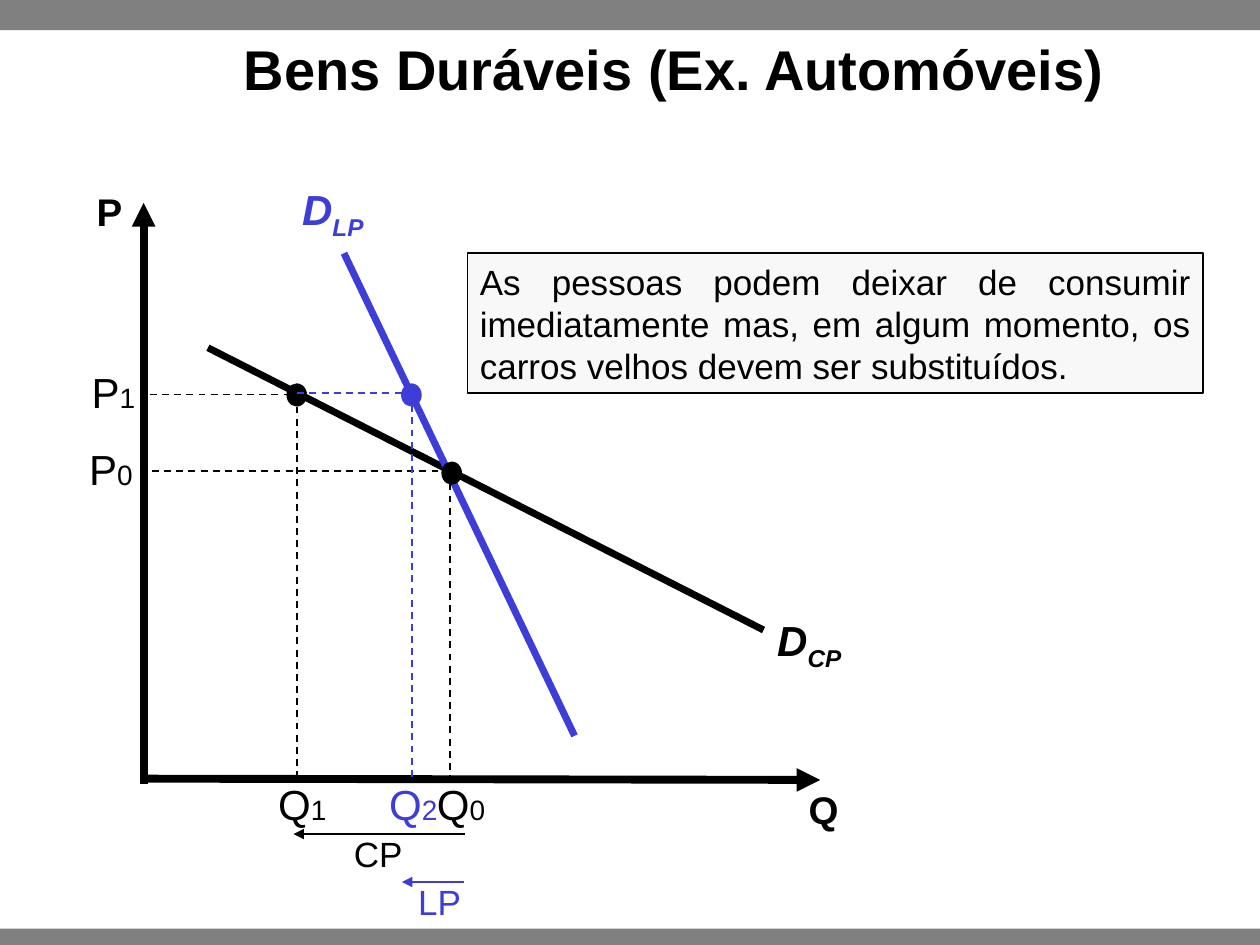
from lxml.etree import SubElement
from pptx import Presentation
from pptx.dml.color import RGBColor
from pptx.enum.dml import MSO_LINE
from pptx.enum.shapes import MSO_CONNECTOR, MSO_SHAPE
from pptx.enum.text import MSO_ANCHOR, PP_ALIGN
from pptx.oxml.ns import qn
from pptx.util import Inches, Pt

BLACK = RGBColor(0x00, 0x00, 0x00)
BLUE = RGBColor(0x3D, 0x3D, 0xD7)
GRAY = RGBColor(0x80, 0x80, 0x80)
PALE = RGBColor(0xF8, 0xF8, 0xF8)

# Shared chart coordinates in inches
PRICE_0, PRICE_1 = 3.74, 3.13
QUANTITY_0, QUANTITY_1, QUANTITY_2 = 3.57, 2.36, 3.27
AXIS_Y = 6.18


class DemandSlide:
    font = "Arial"

    def __init__(self, presentation):
        self.slide = presentation.slides.add_slide(presentation.slide_layouts[5])
        self.shapes = self.slide.shapes

    def style(self, run, size, color=BLACK, bold=False, italic=False):
        font = run.font
        font.name, font.size = self.font, Pt(size)
        font.bold, font.italic = bold, italic
        font.color.rgb = color

    def title(self, text, left, top, width, height):
        title = self.shapes.title
        title.left, title.top = Inches(left), Inches(top)
        title.width, title.height = Inches(width), Inches(height)
        frame = title.text_frame
        frame.text = text
        frame.word_wrap = True
        frame.vertical_anchor = MSO_ANCHOR.BOTTOM
        frame.margin_bottom = Inches(0.56)
        paragraph = frame.paragraphs[0]
        paragraph.alignment = PP_ALIGN.CENTER
        self.style(paragraph.runs[0], 32, bold=True)

    def shape(self, kind, left, top, width, height, fill, line=None):
        shape = self.shapes.add_shape(
            kind, Inches(left), Inches(top), Inches(width), Inches(height))
        shape.shadow.inherit = False
        shape.fill.solid()
        shape.fill.fore_color.rgb = fill
        if line is None:
            shape.line.fill.background()
        else:
            shape.line.color.rgb = line
            shape.line.width = Pt(1)
        return shape

    def point(self, left, top, color=BLACK):
        self.shape(MSO_SHAPE.OVAL, left, top, 0.15, 0.17, color, color)

    def note(self, text, left, top, width, height):
        shape = self.shape(MSO_SHAPE.RECTANGLE, left, top, width, height, PALE, BLACK)
        frame = shape.text_frame
        frame.text = text
        frame.word_wrap = True
        paragraph = frame.paragraphs[0]
        paragraph.alignment = PP_ALIGN.JUSTIFY
        self.style(paragraph.runs[0], 20)

    def label(self, text, left, top, width, height=0.5, size=24, color=BLACK,
              bold=False, italic=False, wrap=True, align=PP_ALIGN.LEFT):
        box = self.shapes.add_textbox(
            Inches(left), Inches(top), Inches(width), Inches(height))
        frame = box.text_frame
        frame.text = text
        frame.word_wrap = wrap
        paragraph = frame.paragraphs[0]
        paragraph.alignment = align
        self.style(paragraph.runs[0], size, color, bold, italic)
        return paragraph

    def indexed_label(self, letter, index, left, top, width, color=BLACK):
        paragraph = self.label(letter, left, top, width, color=color)
        run = paragraph.add_run()
        run.text = index
        self.style(run, 16, color)

    def curve_label(self, index, left, top, width, color=BLACK):
        paragraph = self.label("D", left, top, width, color=color,
                               bold=True, italic=True, wrap=False)
        run = paragraph.add_run()
        run.text = index
        self.style(run, 24, color, bold=True, italic=True)
        run.font._element.set("baseline", "-25000")

    def line(self, start, end, color=BLACK, width=1, dash=False, arrow=False):
        connector = self.shapes.add_connector(
            MSO_CONNECTOR.STRAIGHT, *(Inches(value) for value in (*start, *end)))
        connector.line.color.rgb = color
        connector.line.width = Pt(width)
        if dash:
            connector.line.dash_style = MSO_LINE.DASH
        if arrow:
            SubElement(connector.line._get_or_add_ln(), qn("a:tailEnd"), type="triangle")
        SubElement(connector._element.spPr, qn("a:effectLst"))


def main():
    presentation = Presentation()
    presentation.slide_width, presentation.slide_height = Inches(10), Inches(7.5)
    slide = DemandSlide(presentation)

    # Frame bars and title
    slide.shape(MSO_SHAPE.RECTANGLE, 0, 7.37, 10, 0.13, GRAY)
    slide.shape(MSO_SHAPE.RECTANGLE, 0, 0, 10, 0.24, GRAY)
    slide.title("Bens Duráveis (Ex. Automóveis)", 0.66, 0.58, 9.38, 0.79)

    # Demand curves
    slide.line((1.65, 2.76), (6.06, 5), width=4)
    slide.curve_label("CP", 6.07, 4.83, 0.75)
    slide.line((2.73, 2.01), (4.56, 5.84), BLUE, width=4)
    slide.curve_label("LP", 2.3, 1.41, 0.73, BLUE)

    # Axes
    slide.line((1.14, 6.22), (1.14, 1.61), width=4.5, arrow=True)
    slide.line((1.15, AXIS_Y), (6.51, 6.19), width=4.5, arrow=True)
    slide.label("Q", 6.32, 6.19, 0.53, 0.47, 22, bold=True, wrap=False)
    slide.label("P", 0.67, 1.44, 0.4, 0.47, 22, bold=True, wrap=False,
                align=PP_ALIGN.RIGHT)

    # Starting equilibrium
    slide.line((1.11, PRICE_0), (3.61, PRICE_0), dash=True)
    slide.indexed_label("P", "0", 0.61, 3.47, 0.57)
    slide.indexed_label("Q", "0", 3.37, 6.13, 0.64)
    slide.point(3.51, 3.67)
    slide.line((QUANTITY_0, PRICE_0), (QUANTITY_0, AXIS_Y), dash=True)

    # Short run
    slide.point(2.28, 3.05)
    slide.indexed_label("P", "1", 0.63, 2.86, 0.57)
    slide.indexed_label("Q", "1", 2.11, 6.13, 0.64)
    slide.label("CP", 2.71, 6.56, 0.64, 0.44, 20)
    slide.line((3.69, 6.62), (2.33, 6.62), arrow=True)
    slide.line((1.19, PRICE_1), (2.31, PRICE_1), dash=True)
    slide.line((QUANTITY_1, PRICE_1), (QUANTITY_1, AXIS_Y), dash=True)

    # Long run
    slide.note("As pessoas podem deixar de consumir imediatamente mas, em algum "
               "momento, os carros velhos devem ser substituídos.",
               3.71, 2.01, 5.84, 1.11)
    slide.indexed_label("Q", "2", 2.99, 6.13, 0.64, BLUE)
    slide.label("LP", 3.22, 6.94, 0.64, 0.44, 20, BLUE)
    slide.point(3.19, 3.05, BLUE)
    slide.line((3.68, 7), (3.19, 7), BLUE, arrow=True)
    slide.line((QUANTITY_1, 3.12), (3.22, 3.12), BLUE, dash=True)
    slide.line((QUANTITY_2, 3.12), (QUANTITY_2, AXIS_Y), BLUE, dash=True)

    presentation.save("out.pptx")


if __name__ == "__main__":
    main()
